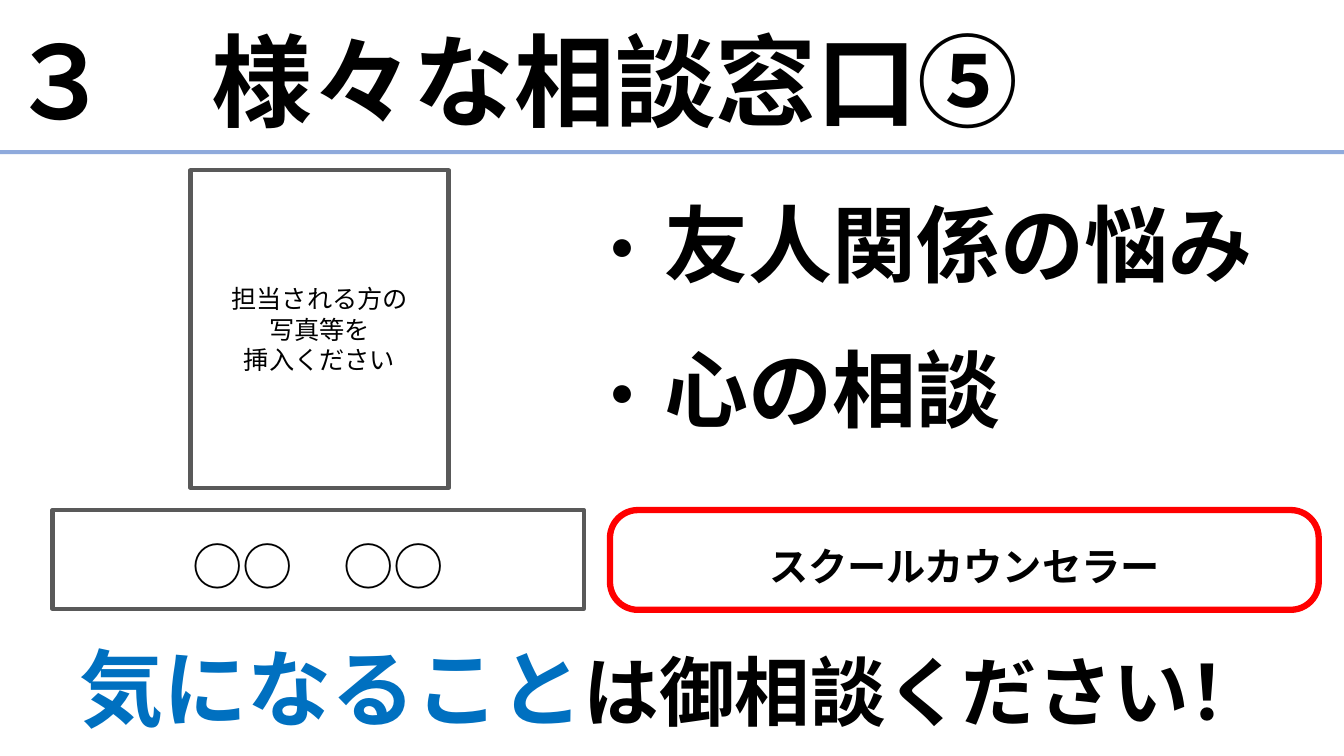
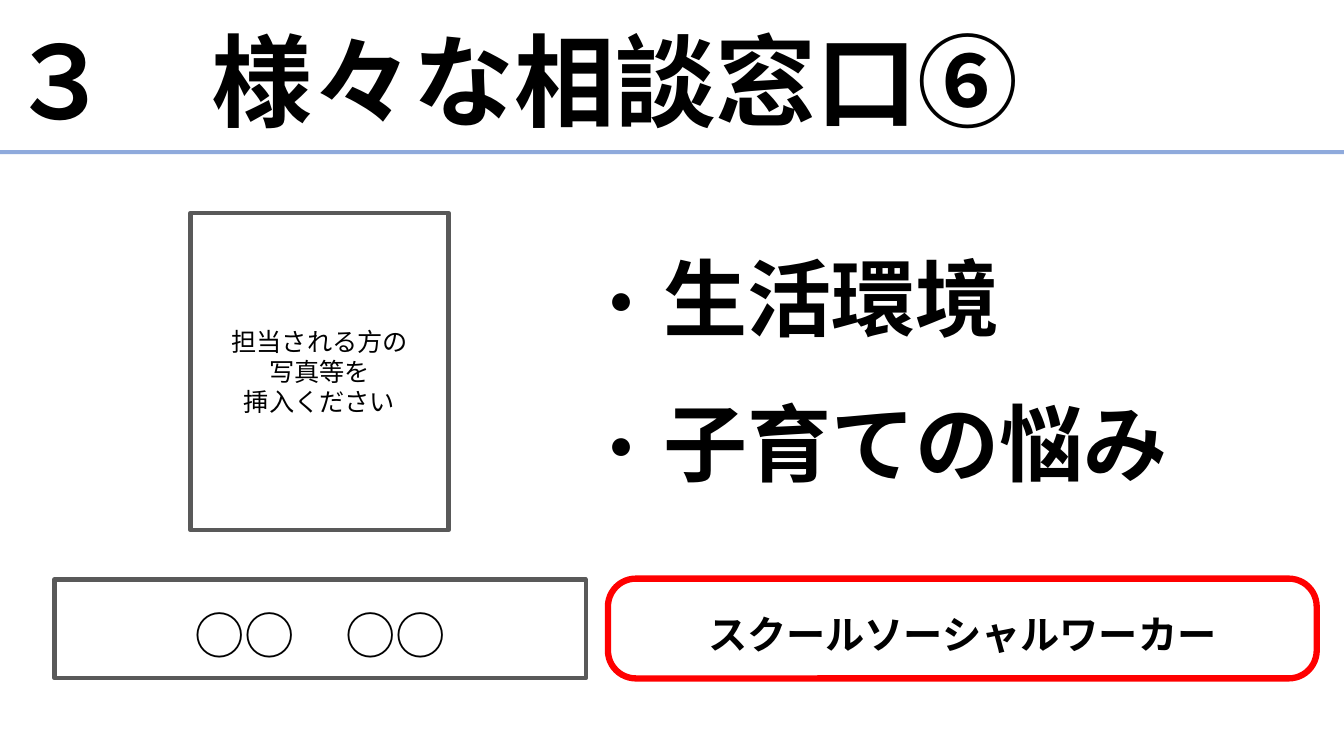
from dataclasses import dataclass

from lxml import etree
from pptx import Presentation
from pptx.dml.color import RGBColor
from pptx.enum.shapes import MSO_SHAPE
from pptx.enum.text import MSO_ANCHOR, MSO_AUTO_SIZE, PP_ALIGN
from pptx.oxml.ns import qn
from pptx.util import Inches, Pt

RECT, ROUNDED = MSO_SHAPE.RECTANGLE, MSO_SHAPE.ROUNDED_RECTANGLE
LEFT, CENTER = PP_ALIGN.LEFT, PP_ALIGN.CENTER
MIDDLE, BOTTOM = MSO_ANCHOR.MIDDLE, MSO_ANCHOR.BOTTOM


@dataclass(frozen=True)
class Theme:
    font: str = "Noto Sans CJK JP"
    text: RGBColor = RGBColor(0x00, 0x00, 0x00)
    white: RGBColor = RGBColor(0xFF, 0xFF, 0xFF)
    rule: RGBColor = RGBColor(0x8F, 0xAA, 0xDC)
    frame: RGBColor = RGBColor(0x59, 0x59, 0x59)
    role: RGBColor = RGBColor(0xFF, 0x00, 0x00)
    accent: RGBColor = RGBColor(0x00, 0x70, 0xC0)
    title_size: int = 72
    topic_size: int = 60
    message_size: int = 54
    name_size: int = 36
    role_size: int = 28
    photo_size: int = 18


THEME = Theme()
BULLET = "・"
PHOTO_LINES = ["担当される方の", "写真等を", "挿入ください"]

SLIDES = [
    dict(title="３　様々な相談窓口⑤", topics=["友人関係の悩み", "心の相談"],
         role="スクールカウンセラー",
         photo_top=1.69, topics_at=(5.66, 1.63), name_at=(0.52, 5.06), role_at=(6.05, 5.06),
         message=[("気になること", THEME.topic_size, THEME.accent),
                  ("は御相談ください！", THEME.message_size, THEME.text)]),
    dict(title="３　様々な相談窓口⑥", topics=["生活環境", "子育ての悩み"],
         role="スクールソーシャルワーカー",
         photo_top=2.11, topics_at=(5.65, 2.16), name_at=(0.54, 5.75), role_at=(6.03, 5.74),
         message=[]),
]


def write(tf, lines, size, bold=False, align=CENTER, anchor=MIDDLE):
    """Fill a text frame, one paragraph a line, and return the paragraphs."""
    tf.word_wrap = True
    tf.auto_size = MSO_AUTO_SIZE.NONE
    tf.vertical_anchor = anchor
    tf.text = "\n".join(lines)
    for p in tf.paragraphs:
        p.alignment = align
        p.font.size, p.font.bold = Pt(size), bold
        p.font.color.rgb = THEME.text
        p.font.name = THEME.font
        east_asian = etree.SubElement(p._p.pPr.find(qn("a:defRPr")), qn("a:ea"))
        east_asian.set("typeface", THEME.font)
    return tf.paragraphs


def add_box(s, kind, box, fill=None, line=None, width=0):
    shape = s.shapes.add_shape(kind, *map(Inches, box))
    shape.shadow.inherit = False
    if fill is None:
        shape.fill.background()
    else:
        shape.fill.solid()
        shape.fill.fore_color.rgb = fill
    if line is None:
        shape.line.fill.background()
    else:
        shape.line.color.rgb = line
        shape.line.width = Pt(width)
    return shape


prs = Presentation()
prs.slide_width, prs.slide_height = Inches(13.33), Inches(7.5)
layout = prs.slide_layouts[1]

for spec_row in SLIDES:
    s = prs.slides.add_slide(layout)
    add_box(s, RECT, (0, 1.49, 13.33, 0.04), fill=THEME.rule)

    title = s.shapes.title
    title.left, title.top, title.width, title.height = map(Inches, (0, 0, 12.3, 1.73))
    p = write(title.text_frame, [spec_row["title"]], THEME.title_size, bold=True, align=LEFT)[0]
    p.line_spacing = 0.9

    topics = s.placeholders[1]
    topics.left, topics.top, topics.width, topics.height = map(
        Inches, (*spec_row["topics_at"], 7.17, 3.13))
    paragraphs = write(topics.text_frame, spec_row["topics"], THEME.topic_size,
                       bold=True, align=LEFT)
    for i, p in enumerate(paragraphs):
        p.line_spacing = 0.9
        p.space_before = Pt(39 if i else 10)
        pPr = p._p.pPr
        pPr.set("marL", str(Pt(THEME.topic_size)))
        pPr.set("indent", str(-Pt(THEME.topic_size)))
        defaults = pPr.find(qn("a:defRPr"))
        for tag, key, value in (("a:buFont", "typeface", THEME.font),
                                ("a:buChar", "char", BULLET)):
            bullet = etree.Element(qn(tag))
            bullet.set(key, value)
            defaults.addprevious(bullet)

    photo = add_box(s, RECT, (1.89, spec_row["photo_top"], 2.56, 3.15),
                    THEME.white, THEME.frame, 3)
    write(photo.text_frame, PHOTO_LINES, THEME.photo_size)

    name = add_box(s, RECT, (*spec_row["name_at"], 5.27, 0.98), THEME.white, THEME.frame, 3)
    write(name.text_frame, ["○○　○○"], THEME.name_size)
    role = add_box(s, ROUNDED, (*spec_row["role_at"], 7.03, 0.99), line=THEME.role, width=4.5)
    role.adjustments[0] = 0.28
    write(role.text_frame, [spec_row["role"]], THEME.role_size, bold=True)
    for shape in (name, role):
        shape.text_frame.margin_top = Inches(0.16)

    if spec_row["message"]:
        message = s.shapes.add_textbox(*map(Inches, (0, 5.87, 13.33, 1.51)))
        p = write(message.text_frame, [""], THEME.message_size, bold=True, anchor=BOTTOM)[0]
        p.line_spacing = 0.9
        p.space_before = Pt(10)
        for text, size, color in spec_row["message"]:
            r = p.add_run()
            r.text = text
            r.font.size = Pt(size)
            r.font.color.rgb = color

prs.save("out.pptx")
